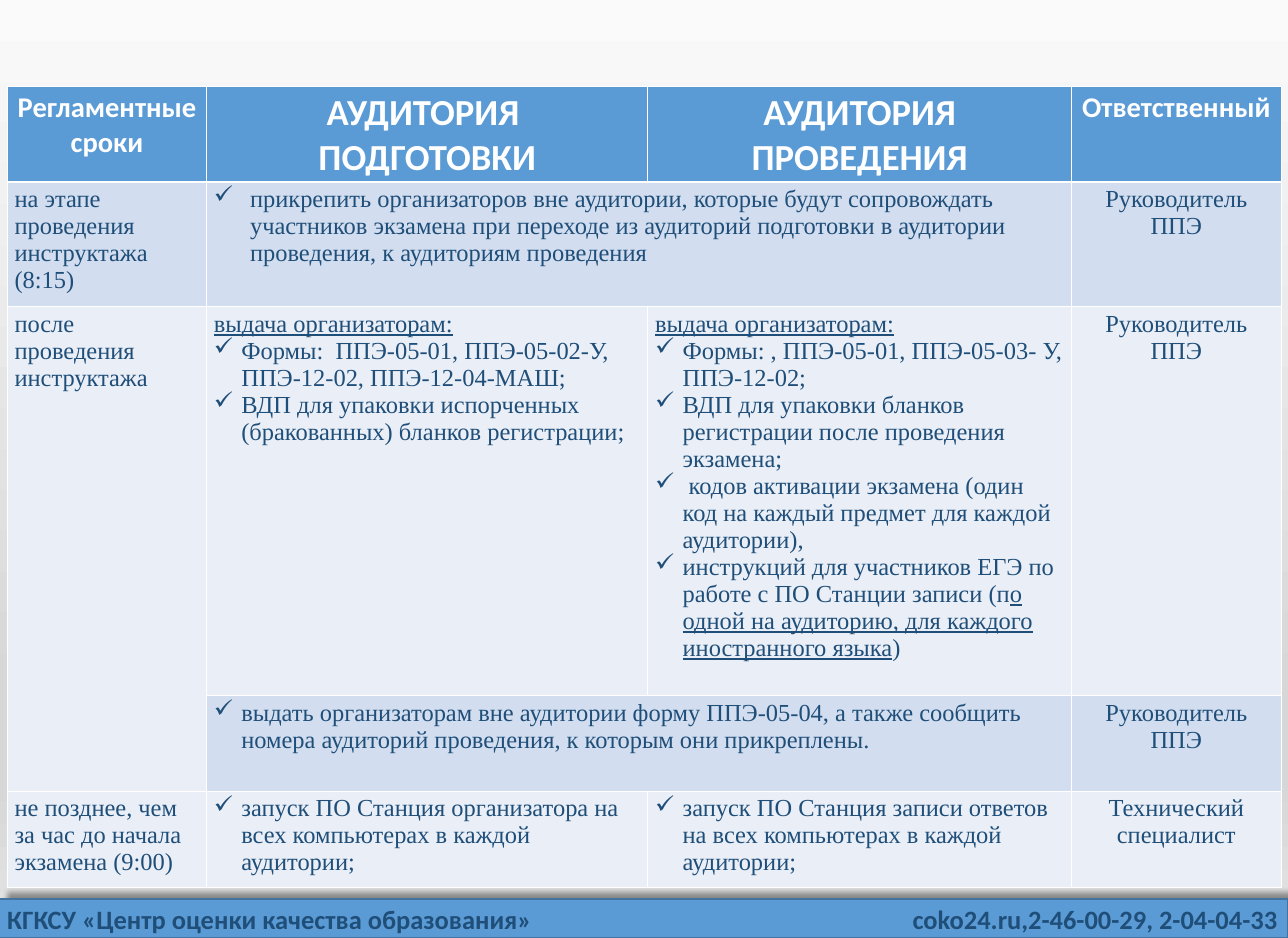
from lxml.etree import SubElement
from pptx import Presentation
from pptx.dml.color import RGBColor
from pptx.enum.shapes import MSO_SHAPE as Shape
from pptx.enum.text import MSO_AUTO_SIZE as AutoSize, PP_ALIGN as Align
from pptx.oxml.ns import qn
from pptx.util import Cm, Pt

BLUE, NAVY, WHITE = "5B9BD5", "1F4E79", "FFFFFF"
MID, PALE = "D2DEEF", "EAEFF7"
WIDTH, HEIGHT, FOOTER_TOP = 44.63, 32.49, 31.14
COLUMNS = [6.91, 15.29, 14.68, 7.26]
ROWS = [3.3, 4.3, 13.48, 3.3, 3.32]
ROW_FILLS = [BLUE, MID, PALE, MID, PALE]
BACKGROUND = [(0, "FAFAFA"), (74, "D7D7D7"), (83, "D7D7D7"), (100, "E4E4E4")]

HEADERS = [
    (["Регламентные сроки"], 28),
    (["АУДИТОРИЯ ", "ПОДГОТОВКИ"], 36),
    (["АУДИТОРИЯ ПРОВЕДЕНИЯ"], 36),
    (["Ответственный"], 28),
]
STAGES = {
    1: "на этапе проведения инструктажа (8:15)",
    2: "после проведения инструктажа",
    4: "не позднее, чем за час до начала экзамена (9:00)",
}
RESPONSIBLE = {
    1: "Руководитель ППЭ",
    2: "Руководитель ППЭ",
    3: "Руководитель ППЭ",
    4: "Технический специалист",
}
ISSUE = "_выдача организаторам:_"
TASKS = {
    (1, 1): ["прикрепить организаторов вне аудитории, которые будут сопровождать "
             "участников экзамена при переходе из аудиторий подготовки в аудитории "
             "проведения, к аудиториям проведения"],
    (2, 1): [ISSUE,
             "Формы:  ППЭ-05-01, ППЭ-05-02-У, ППЭ-12-02, ППЭ-12-04-МАШ;",
             "ВДП для упаковки испорченных (бракованных) бланков регистрации;"],
    (2, 2): [ISSUE,
             "Формы: , ППЭ-05-01, ППЭ-05-03- У, ППЭ-12-02;",
             "ВДП для упаковки бланков регистрации после проведения экзамена;",
             " кодов активации экзамена (один код на каждый предмет для каждой аудитории),",
             "инструкций для участников ЕГЭ по работе с ПО Станции записи "
             "(п_о одной на аудиторию, для каждого иностранного языка_)"],
    (3, 1): ["выдать организаторам вне аудитории форму ППЭ-05-04, а также сообщить "
             "номера аудиторий проведения, к которым они прикреплены."],
    (4, 1): ["запуск ПО Станция организатора на всех компьютерах в каждой аудитории;"],
    (4, 2): ["запуск ПО Станция записи ответов на всех компьютерах в каждой аудитории;"],
}


def rgb(color):
    return RGBColor.from_string(color)


def add_bullet(p, indent):
    pPr = p._p.get_or_add_pPr()
    pPr.set("marL", str(Cm(indent)))
    pPr.set("indent", str(-Cm(indent)))
    SubElement(pPr, qn("a:buChar"), char="✓")


def write(tf, lines, size=24, font="Times New Roman", color=NAVY, bold=False,
          align=Align.LEFT, indent=0):
    for i, line in enumerate(lines):
        p = tf.add_paragraph() if i else tf.paragraphs[0]
        p.alignment = align
        if indent and line != ISSUE:
            add_bullet(p, indent)
        for j, part in enumerate(line.split("_")):
            if part:
                r = p.add_run()
                r.text = part
                r.font.size, r.font.name = Pt(size), font
                r.font.bold, r.font.underline = bold, j % 2 == 1
                r.font.color.rgb = rgb(color)


def add_color(parent, color):
    return SubElement(parent, qn("a:srgbClr"), val=color)


def set_background(s):
    fill = s.background.fill
    fill.gradient()
    fill.gradient_angle = 270
    stops = next(s.element.iter(qn("a:gsLst")))
    stops.clear()
    for position, color in BACKGROUND:
        add_color(SubElement(stops, qn("a:gs"), pos=str(position * 1000)), color)


def style_cell(cell, fill, **widths):
    tcPr = cell._tc.get_or_add_tcPr()
    for side in "LRTB":
        ln = SubElement(tcPr, qn(f"a:ln{side}"), w=str(Pt(widths.get(side, 1))))
        add_color(SubElement(ln, qn("a:solidFill")), WHITE)
    cell.fill.solid()
    cell.fill.fore_color.rgb = rgb(fill)


def add_schedule(s):
    frame = s.shapes.add_table(len(ROWS), len(COLUMNS), Cm(0.25), Cm(3),
                               Cm(sum(COLUMNS)), Cm(sum(ROWS)))
    table = frame.table
    for column, width in zip(table.columns, COLUMNS):
        column.width = Cm(width)
    for i, (row, height) in enumerate(zip(table.rows, ROWS)):
        row.height = Cm(height)
        for j, cell in enumerate(row.cells):
            fill = PALE if (i, j) == (3, 0) else ROW_FILLS[i]
            style_cell(cell, fill, T=3 if i == 1 else 1, B=3 if i == 0 else 1)
    for first, last in [((1, 1), (1, 2)), ((2, 0), (3, 0)), ((3, 1), (3, 2))]:
        table.cell(*first).merge(table.cell(*last))

    for j, (lines, size) in enumerate(HEADERS):
        write(table.cell(0, j).text_frame, lines, size=size, font="Calibri",
              color=WHITE, bold=True, align=Align.CENTER)
    for i, stage in STAGES.items():
        write(table.cell(i, 0).text_frame, [stage])
    for i, person in RESPONSIBLE.items():
        write(table.cell(i, 3).text_frame, [person], align=Align.CENTER)
    for (i, j), lines in TASKS.items():
        write(table.cell(i, j).text_frame, lines, indent=1.25 if i == 1 else 0.95)


def add_footer_bar(s):
    sp = s.shapes.add_shape(Shape.RECTANGLE, 0, Cm(FOOTER_TOP), Cm(WIDTH),
                            Cm(HEIGHT - FOOTER_TOP))
    sp.fill.solid()
    sp.fill.fore_color.rgb = rgb(BLUE)
    sp.line.color.rgb = rgb("43739E")
    sp.line.width = Pt(1)
    sp.shadow.inherit = False
    effects = sp._element.spPr.find(qn("a:effectLst"))
    shadow = SubElement(effects, qn("a:outerShdw"), blurRad=str(Pt(4)),
                        dist=str(Pt(10)), dir=str(315 * 60000), rotWithShape="0")
    SubElement(add_color(shadow, "000000"), qn("a:alpha"), val="40000")


def add_footer_text(s, text, left, width):
    tf = s.shapes.add_textbox(Cm(left), Cm(FOOTER_TOP), Cm(width), Cm(1.37)).text_frame
    tf.word_wrap = False
    tf.auto_size = AutoSize.SHAPE_TO_FIT_TEXT
    write(tf, [text], size=26, font="Calibri", bold=True)


def main():
    prs = Presentation()
    prs.slide_width, prs.slide_height = Cm(WIDTH), Cm(HEIGHT)
    s = prs.slides.add_slide(prs.slide_layouts[6])
    set_background(s)
    add_footer_bar(s)
    add_footer_text(s, "КГКСУ «Центр оценки качества образования»", 0, 18.9)
    add_footer_text(s, "coko24.ru,2-46-00-29, 2-04-04-33", 31.37, 13.26)
    add_schedule(s)
    prs.save("out.pptx")


if __name__ == "__main__":
    main()
